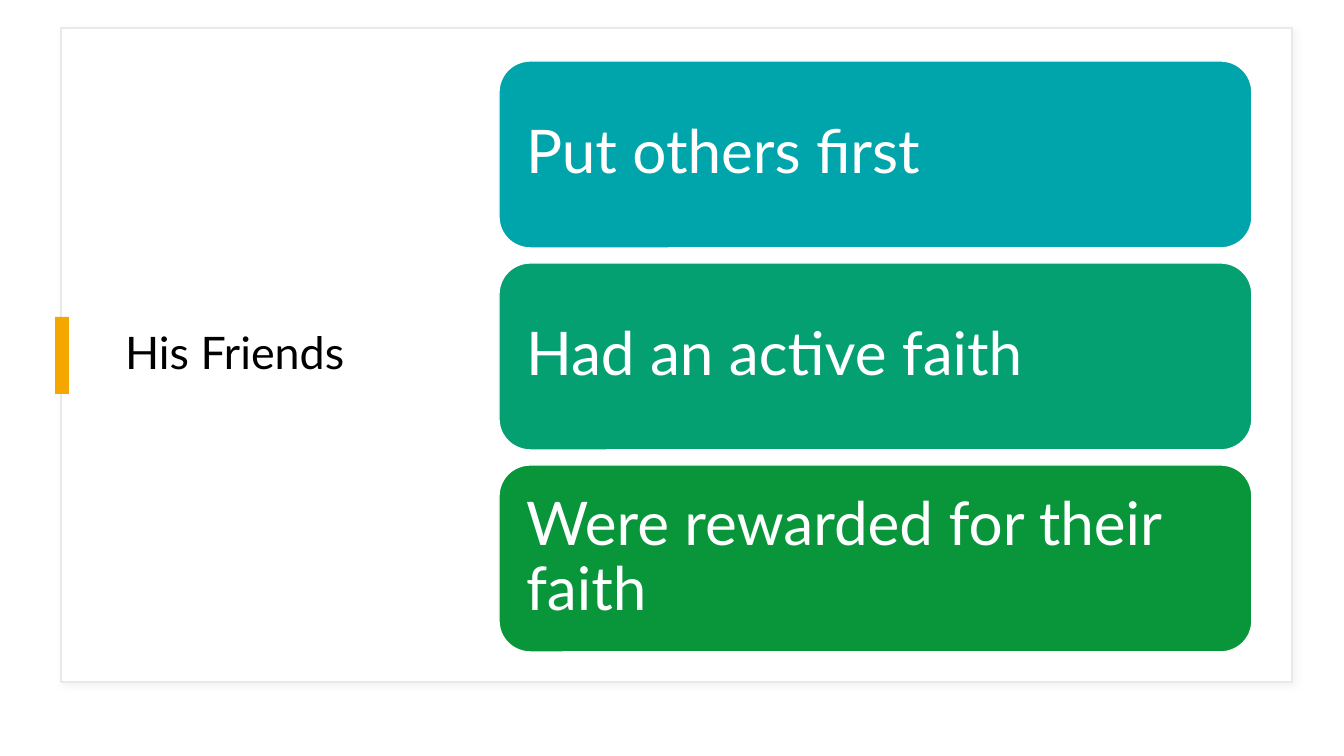
from lxml.etree import SubElement
from pptx import Presentation
from pptx.dml.color import RGBColor
from pptx.enum.shapes import MSO_SHAPE
from pptx.enum.text import MSO_ANCHOR, PP_ALIGN
from pptx.oxml.ns import qn
from pptx.util import Pt

# Content
TITLE = "His Friends"
CARDS = [
    ("Put others first", RGBColor(0x00, 0xA5, 0xAB)),
    ("Had an active faith", RGBColor(0x05, 0xA0, 0x71)),
    ("Were rewarded for their faith", RGBColor(0x09, 0x96, 0x3B)),
]

# Look
FONT = "Lato"
BLACK = RGBColor(0, 0, 0)
WHITE = RGBColor(0xFF, 0xFF, 0xFF)
AMBER = RGBColor(0xF5, 0xA7, 0x00)
EDGE = RGBColor(0xE9, 0xE9, 0xE9)
SHADE = "D9D9D9"

# Layout in px
WIDE, HIGH = 1344, 756
FRAME = (61, 28, 1231, 654)
HEAD = (115, 55, 330, 600)
MARK = (55, 317, 14, 77)
LEFT, TOP, CARD_W, CARD_H, GAP = 499, 61, 753, 187, 15
PAD = 27


def px(n):
    return round(n * 914400 / 100.8)


def add_box(slide, kind, area, fill, line=None):
    box = slide.shapes.add_shape(kind, *map(px, area))
    box.shadow.inherit = False
    box.fill.solid()
    box.fill.fore_color.rgb = fill
    if line is None:
        box.line.fill.background()
    else:
        box.line.color.rgb = line
        box.line.width = Pt(1)
    return box


def add_shade(box):
    effects = box._element.spPr.find(qn("a:effectLst"))
    outer = SubElement(effects, qn("a:outerShdw"), blurRad=str(Pt(4)),
                       dist=str(Pt(3)), dir=str(45 * 60000))
    color = SubElement(outer, qn("a:srgbClr"), val=SHADE)
    SubElement(color, qn("a:alpha"), val="30000")


def set_text(shape, text, size, color, side, edge):
    frame = shape.text_frame
    frame.text = text
    frame.word_wrap = True
    frame.vertical_anchor = MSO_ANCHOR.MIDDLE
    frame.margin_left = frame.margin_right = px(side)
    frame.margin_top = frame.margin_bottom = px(edge)
    para = frame.paragraphs[0]
    para.alignment = PP_ALIGN.LEFT
    para.line_spacing = 0.9
    font = para.runs[0].font
    font.name = FONT
    font.size = Pt(size)
    font.color.rgb = color


def main():
    deck = Presentation()
    deck.slide_width, deck.slide_height = px(WIDE), px(HIGH)
    slide = deck.slides.add_slide(deck.slide_layouts[6])

    # Frame, title and accent mark
    frame = add_box(slide, MSO_SHAPE.RECTANGLE, FRAME, WHITE, EDGE)
    add_shade(frame)
    head = slide.shapes.add_textbox(*map(px, HEAD))
    set_text(head, TITLE, 32, BLACK, 10, 5)
    add_box(slide, MSO_SHAPE.RECTANGLE, MARK, AMBER)

    # Stacked cards
    for i, (text, fill) in enumerate(CARDS):
        area = (LEFT, TOP + i * (CARD_H + GAP), CARD_W, CARD_H)
        card = add_box(slide, MSO_SHAPE.ROUNDED_RECTANGLE, area, fill, WHITE)
        # The rounded corner already insets the text by about 9 px
        set_text(card, text, 43, WHITE, PAD - 9, PAD - 9)

    deck.save("out.pptx")


if __name__ == "__main__":
    main()
